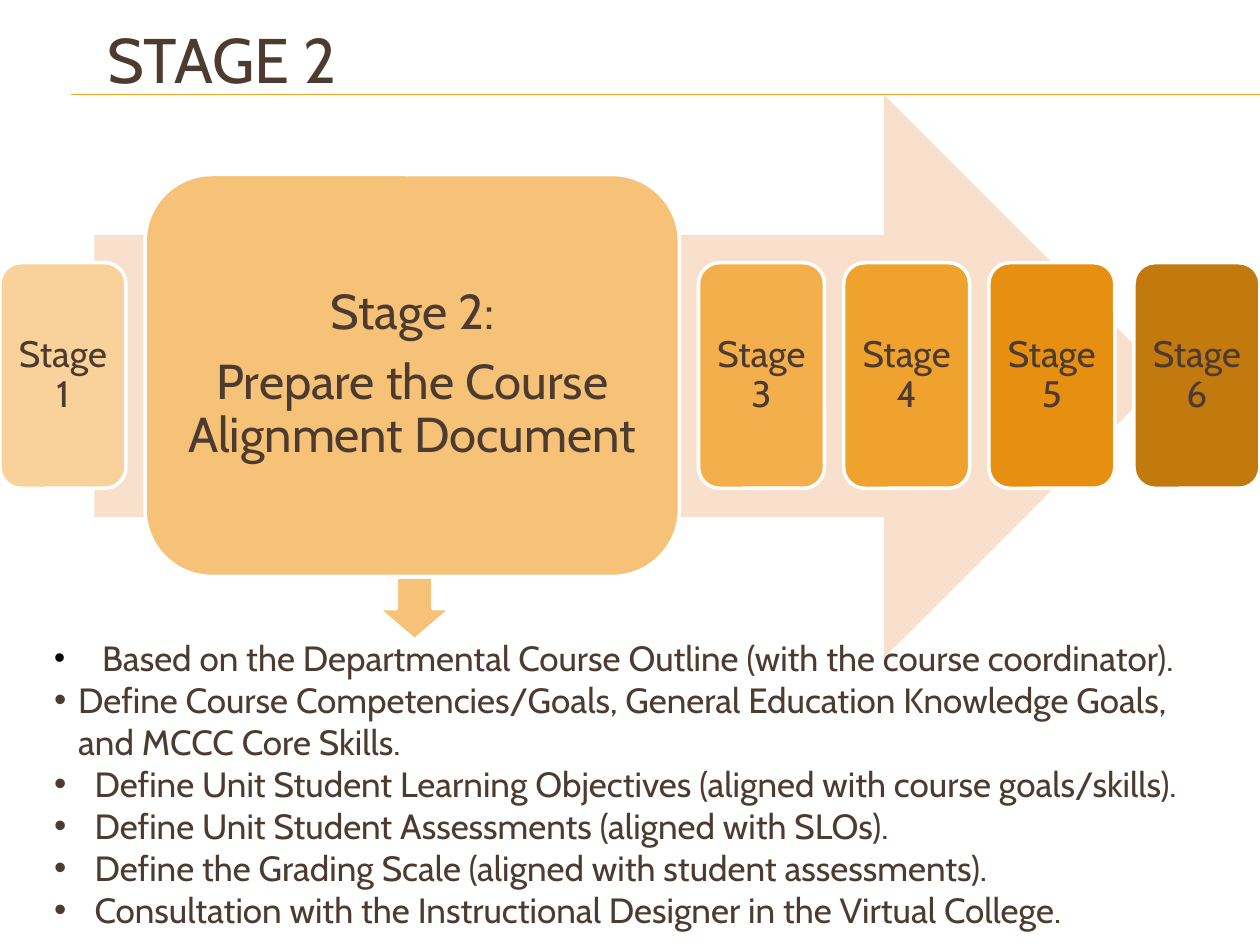
from dataclasses import dataclass

import lxml.etree
import pptx
import pptx.dml.color
import pptx.enum.shapes
import pptx.enum.text
import pptx.oxml.ns
import pptx.util

Inches = pptx.util.Inches
Pt = pptx.util.Pt
RGBColor = pptx.dml.color.RGBColor
Shape = pptx.enum.shapes.MSO_SHAPE
Anchor = pptx.enum.text.MSO_ANCHOR
Align = pptx.enum.text.PP_ALIGN

BROWN = RGBColor(0x4E, 0x3B, 0x30)
BLACK = RGBColor(0, 0, 0)
WHITE = RGBColor(0xFF, 0xFF, 0xFF)
AMBER = RGBColor(0xF0, 0xA2, 0x2E)
PEACH = RGBColor(0xF9, 0xE0, 0xCD)
SAND = RGBColor(0xF5, 0xC2, 0x77)
FONT = "Cabin"
SLIDE_WIDTH, SLIDE_HEIGHT = 10, 7.5
STAGE_MIDDLE = 2.98


@dataclass
class Stage:
    text: str
    fill: RGBColor
    width: float = 1
    height: float = 1.79
    size: int = 21
    inset: float = 0.04


@dataclass
class Step:
    text: str
    indent: float = 0.32
    bullet_color: RGBColor = BROWN
    bullet_percent: int = 100


STAGES = [
    Stage("Stage\v1", RGBColor(0xF8, 0xD2, 0x9A)),
    Stage("Stage 2:\nPrepare the Course Alignment Document", SAND, 4.24, 3.19, 28, 0.12),
    Stage("Stage\v3", RGBColor(0xF2, 0xAF, 0x4C)),
    Stage("Stage\v4", AMBER),
    Stage("Stage\v5", RGBColor(0xE6, 0x8F, 0x10)),
    Stage("Stage\v6", RGBColor(0xC2, 0x79, 0x0E)),
]

STEPS = [
    Step("Based on the Departmental Course Outline (with the course coordinator).", 0.38, BLACK, 90),
    Step("Define Course Competencies/Goals, General Education Knowledge Goals, "
         "and MCCC Core Skills.", 0.19),
    Step("Define Unit Student Learning Objectives (aligned with course goals/skills)."),
    Step("Define Unit Student Assessments (aligned with SLOs)."),
    Step("Define the Grading Scale (aligned with student assessments)."),
    Step("Consultation with the Instructional Designer in the Virtual College."),
]


def place(shape, left: float, top: float, width: float, height: float) -> None:
    shape.left, shape.top = Inches(left), Inches(top)
    shape.width, shape.height = Inches(width), Inches(height)


def style_runs(paragraph, size: int) -> None:
    for run in paragraph.runs:
        run.font.name = FONT
        run.font.size = Pt(size)
        run.font.color.rgb = BROWN


def add_block(slide, kind, left: float, top: float, width: float, height: float,
              fill: RGBColor, outlined: bool = True):
    block = slide.shapes.add_shape(
        kind, Inches(left), Inches(top), Inches(width), Inches(height))
    block.shadow.inherit = False
    block.fill.solid()
    block.fill.fore_color.rgb = fill
    if outlined:
        block.line.color.rgb = WHITE
        block.line.width = Pt(2)
    else:
        block.line.fill.background()
    return block


def add_stage(slide, stage: Stage, left: float) -> None:
    card = add_block(slide, Shape.ROUNDED_RECTANGLE, left, STAGE_MIDDLE - stage.height / 2,
                     stage.width, stage.height, stage.fill)
    frame = card.text_frame
    frame.text = stage.text
    frame.word_wrap = True
    frame.vertical_anchor = Anchor.MIDDLE
    frame.margin_left = frame.margin_right = Inches(stage.inset)
    frame.margin_top = frame.margin_bottom = Inches(stage.inset)
    for paragraph in frame.paragraphs:
        paragraph.alignment = Align.CENTER
        paragraph.line_spacing = 0.9
        paragraph.space_after = Pt(0.35 * stage.size)
        style_runs(paragraph, stage.size)


def add_bullet(paragraph, step: Step) -> None:
    properties = paragraph._p.get_or_add_pPr()
    properties.set("marL", str(Inches(step.indent)))
    properties.set("indent", str(-Inches(step.indent)))

    def add(parent, tag: str, **attributes: str):
        return lxml.etree.SubElement(parent, pptx.oxml.ns.qn(tag), attributes)

    add(add(properties, "a:buClr"), "a:srgbClr", val=str(step.bullet_color))
    add(properties, "a:buSzPct", val=str(step.bullet_percent * 1000))
    add(properties, "a:buFont", typeface="Arial")
    add(properties, "a:buChar", char="•")


def fill_title(title) -> None:
    place(title, 0.75, 0, 9.25, 0.92)
    title.text_frame.text = "STAGE 2"
    title.text_frame.vertical_anchor = Anchor.MIDDLE
    heading = title.text_frame.paragraphs[0]
    heading.alignment = Align.LEFT
    style_runs(heading, 36)


def fill_steps(body) -> None:
    place(body, 0.33, 5, 9.33, 2.46)
    frame = body.text_frame
    frame.text = "\n".join(step.text for step in STEPS)
    frame.auto_size = pptx.enum.text.MSO_AUTO_SIZE.SHAPE_TO_FIT_TEXT
    for paragraph, step in zip(frame.paragraphs, STEPS):
        add_bullet(paragraph, step)
        paragraph.space_before = Pt(0)
        style_runs(paragraph, 20)


def add_rule(slide) -> None:
    rule = slide.shapes.add_connector(
        pptx.enum.shapes.MSO_CONNECTOR.STRAIGHT,
        Inches(0.56), Inches(0.75), Inches(SLIDE_WIDTH), Inches(0.75))
    rule.line.color.rgb = AMBER
    rule.line.width = Pt(0.75)
    lxml.etree.SubElement(rule._element.spPr, pptx.oxml.ns.qn("a:effectLst"))


def main() -> None:
    deck = pptx.Presentation()
    deck.slide_width, deck.slide_height = Inches(SLIDE_WIDTH), Inches(SLIDE_HEIGHT)
    slide = deck.slides.add_slide(deck.slide_layouts[1])

    # Heading, rule and list of steps
    fill_title(slide.shapes.title)
    fill_steps(slide.placeholders[1])
    add_rule(slide)

    # Process arrow with the stages spread evenly over the slide width
    add_block(slide, Shape.RIGHT_ARROW, 0.75, 0.75, 8.5, 4.47, PEACH, outlined=False)
    gap = (SLIDE_WIDTH - sum(stage.width for stage in STAGES)) / (len(STAGES) - 1)
    left = 0.0
    for stage in STAGES:
        add_stage(slide, stage, left)
        left += stage.width + gap

    # Pointer from the current stage to its steps
    add_block(slide, Shape.DOWN_ARROW, 3, 4.58, 0.58, 0.5, SAND)

    deck.save("out.pptx")


if __name__ == "__main__":
    main()
